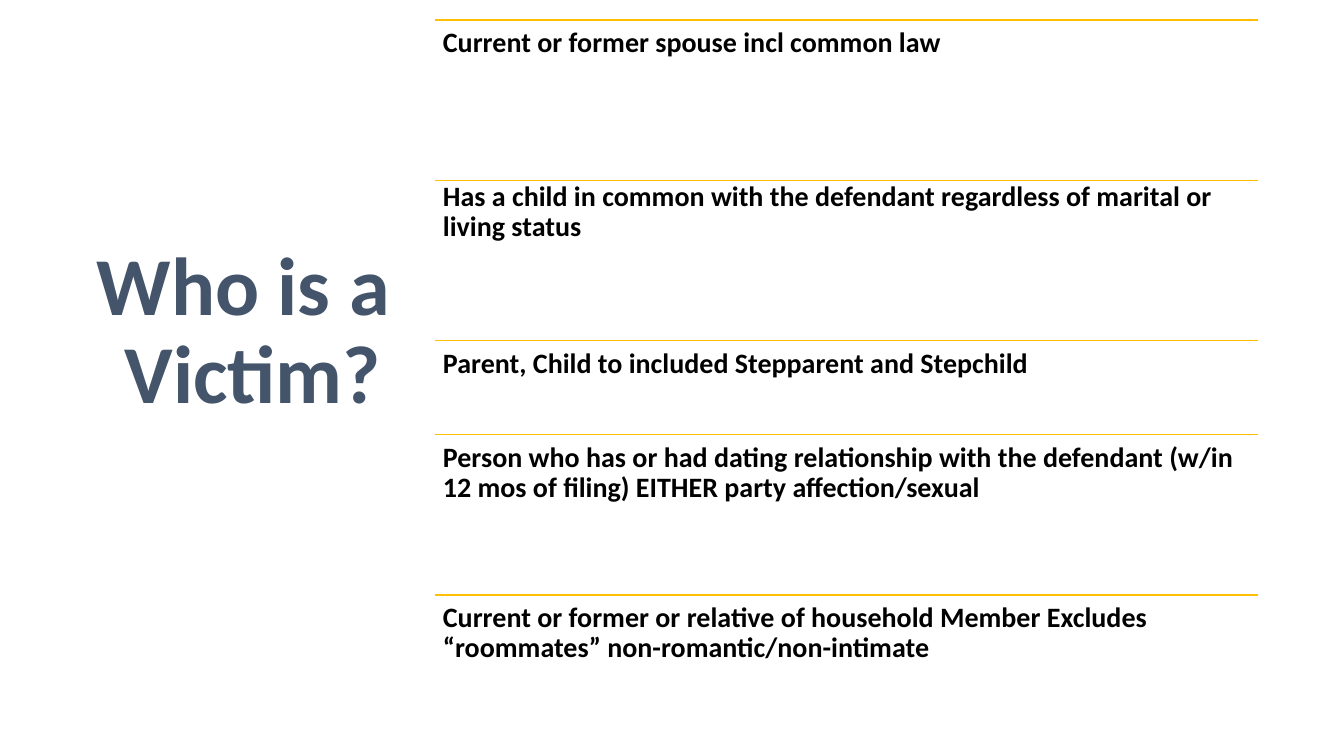
"""Builds the "Who is a Victim?" slide: a title beside a ruled list of definitions."""
from lxml import etree
from pptx import Presentation
from pptx.dml.color import RGBColor
from pptx.enum.shapes import MSO_CONNECTOR
from pptx.enum.text import MSO_ANCHOR, PP_ALIGN
from pptx.oxml.ns import qn
from pptx.util import Pt

STRAIGHT = MSO_CONNECTOR.STRAIGHT
TOP, MIDDLE = MSO_ANCHOR.TOP, MSO_ANCHOR.MIDDLE
LEFT, CENTER = PP_ALIGN.LEFT, PP_ALIGN.CENTER

TITLE = "Who is a \vVictim?"
TALL, SHORT = 114.5, 67
DEFINITIONS = [
    ("Current or former spouse incl common law", TALL, 0),
    ("Has a child in common with the defendant regardless of marital or living status", TALL, -5),
    ("Parent, Child to included Stepparent and Stepchild", SHORT, 0),
    ("Person who has or had dating relationship with the defendant (w/in 12 mos of filing) "
     "EITHER party affection/sexual", TALL, 0),
    ("Current or former or relative of household Member Excludes “roommates” "
     "non-romantic/non-intimate", TALL, 0),
]
LIST_LEFT, LIST_TOP, LIST_WIDTH = 310.4, 14.4, 588.2
TITLE_BOX = (50.4, 50.4, 260, 439.2)
TITLE_INSETS = (9.6, 4.8, 9.6, 69.3)
DEFINITION_INSETS = (6, 6, 6, 6)


def color(hex_value):
    return RGBColor.from_string(hex_value)


def add_text(slide, text, box, insets, size, hex_value, align, anchor):
    frame = slide.shapes.add_textbox(*map(Pt, box)).text_frame
    frame.word_wrap = True
    frame.vertical_anchor = anchor
    (frame.margin_left, frame.margin_top,
     frame.margin_right, frame.margin_bottom) = map(Pt, insets)
    paragraph = frame.paragraphs[0]
    paragraph.text = text
    paragraph.alignment = align
    paragraph.line_spacing = 0.9
    paragraph.font.name = "Calibri"
    paragraph.font.size = Pt(size)
    paragraph.font.bold = True
    paragraph.font.color.rgb = color(hex_value)


def add_rule(slide, left, top, width):
    rule = slide.shapes.add_connector(STRAIGHT, Pt(left), Pt(top), Pt(left + width), Pt(top))
    rule.line.color.rgb = color("FFC000")
    rule.line.width = Pt(1)
    etree.SubElement(rule.line._get_or_add_ln().getparent(), qn("a:effectLst"))


def main():
    deck = Presentation()
    deck.slide_width, deck.slide_height = Pt(960), Pt(540)
    slide = deck.slides.add_slide(deck.slide_layouts[6])
    add_text(slide, TITLE, TITLE_BOX, TITLE_INSETS, 58.7, "44546A", CENTER, MIDDLE)

    top = LIST_TOP
    for definition, height, shift in DEFINITIONS:
        add_rule(slide, LIST_LEFT, top, LIST_WIDTH)
        add_text(slide, definition, (LIST_LEFT, top + shift, LIST_WIDTH, height),
                 DEFINITION_INSETS, 20, "000000", LEFT, TOP)
        top += height
    deck.save("out.pptx")


if __name__ == "__main__":
    main()
